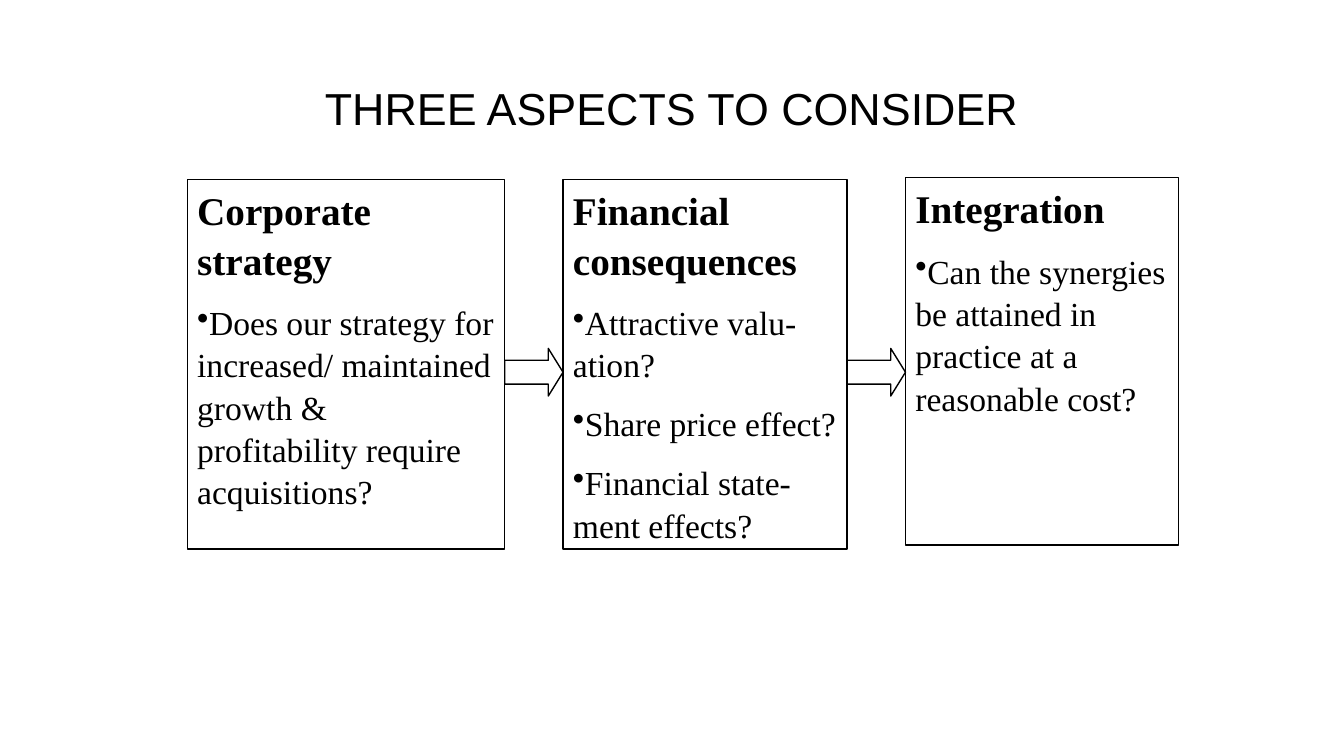
from dataclasses import dataclass

from lxml.etree import SubElement
from pptx import Presentation
from pptx.dml.color import RGBColor
from pptx.enum.shapes import MSO_SHAPE
from pptx.enum.text import MSO_ANCHOR, PP_ALIGN
from pptx.oxml.ns import qn
from pptx.util import Cm, Pt


@dataclass(frozen=True)
class Theme:
    """Colours, fonts and sizes of the slide."""
    ink: RGBColor = RGBColor(0, 0, 0)
    paper: RGBColor = RGBColor(255, 255, 255)
    sans: str = "Arial"
    serif: str = "Times New Roman"
    title: Pt = Pt(32)
    head: Pt = Pt(28)
    body: Pt = Pt(24)
    rule: Pt = Pt(1)


THEME = Theme()
GAP = 1.47
STEPS = [
    (8, 4.52, 9.32, "Corporate strategy", [
        "Does our strategy for increased/ maintained growth & profitability require acquisitions?"]),
    (7.16, 4.52, 9.32, "Financial consequences", [
        "Attractive valu-ation?", "Share price effect?", "Financial state-ment effects?"]),
    (6.88, 4.47, 9.27, "Integration", [
        "Can the synergies be attained in practice at a reasonable cost?"]),
]


def apply(item, form):
    """Set each format value on the item."""
    for name, value in form.items():
        setattr(item, name, value)


def write(para, text, form, font):
    """Fill a paragraph with text in the given format."""
    para.text = text
    apply(para, form)
    apply(para.font, font)
    para.font.color.rgb = THEME.ink


def bullet(para):
    """Give a paragraph a flush bullet."""
    props = para._p.get_or_add_pPr()
    props.set("marL", "0")
    props.set("indent", "0")
    SubElement(props, qn("a:buChar")).set("char", "•")


def outline(slide, kind, box):
    """Add an outlined shape without fill or shadow."""
    shape = slide.shapes.add_shape(kind, *map(Cm, box))
    shape.shadow.inherit = False
    shape.fill.background()
    shape.line.color.rgb = THEME.ink
    shape.line.width = THEME.rule
    return shape


def heading(slide, box, text):
    """Place the slide title at the foot of its box."""
    frame = slide.shapes.add_textbox(*map(Cm, box)).text_frame
    apply(frame, {"word_wrap": True, "vertical_anchor": MSO_ANCHOR.BOTTOM})
    write(frame.paragraphs[0], text,
          {"alignment": PP_ALIGN.CENTER, "line_spacing": 0.9},
          {"name": THEME.sans, "size": THEME.title})


def panel(slide, box, head, points):
    """Place a framed aspect with its head and points."""
    frame = outline(slide, MSO_SHAPE.RECTANGLE, box).text_frame
    apply(frame, {"word_wrap": True, "vertical_anchor": MSO_ANCHOR.TOP})
    form = {"alignment": PP_ALIGN.LEFT, "line_spacing": 1.05}
    write(frame.paragraphs[0], head, form,
          {"name": THEME.serif, "size": THEME.head, "bold": True})
    for point in points:
        para = frame.add_paragraph()
        bullet(para)
        write(para, point, {**form, "space_before": THEME.body // 2},
              {"name": THEME.serif, "size": THEME.body, "bold": False})


def arrow(slide, box):
    """Place a block arrow that fills its box."""
    shape = outline(slide, MSO_SHAPE.RIGHT_ARROW, box)
    shape.fill.solid()
    shape.fill.fore_color.rgb = THEME.paper
    shape.adjustments[0] = 0.5
    shape.adjustments[1] = 0.31


def flow(slide, left, steps):
    """Place the panels in a row with an arrow in each gap."""
    links = []
    for index, (width, top, height, head, points) in enumerate(steps):
        panel(slide, (left, top, width, height), head, points)
        left += width
        if index < len(steps) - 1:
            links.append((left, 8.78, GAP, 1.2))
            left += GAP
    for link in links:
        arrow(slide, link)


def main():
    """Build and save the slide."""
    deck = Presentation()
    apply(deck, {"slide_width": Cm(33.87), "slide_height": Cm(19.05)})
    slide = deck.slides.add_slide(deck.slide_layouts[6])
    heading(slide, (5.5, 1.32, 22.86, 2.21), "THREE ASPECTS TO CONSIDER")
    flow(slide, 4.72, STEPS)
    deck.save("out.pptx")


if __name__ == "__main__":
    main()
